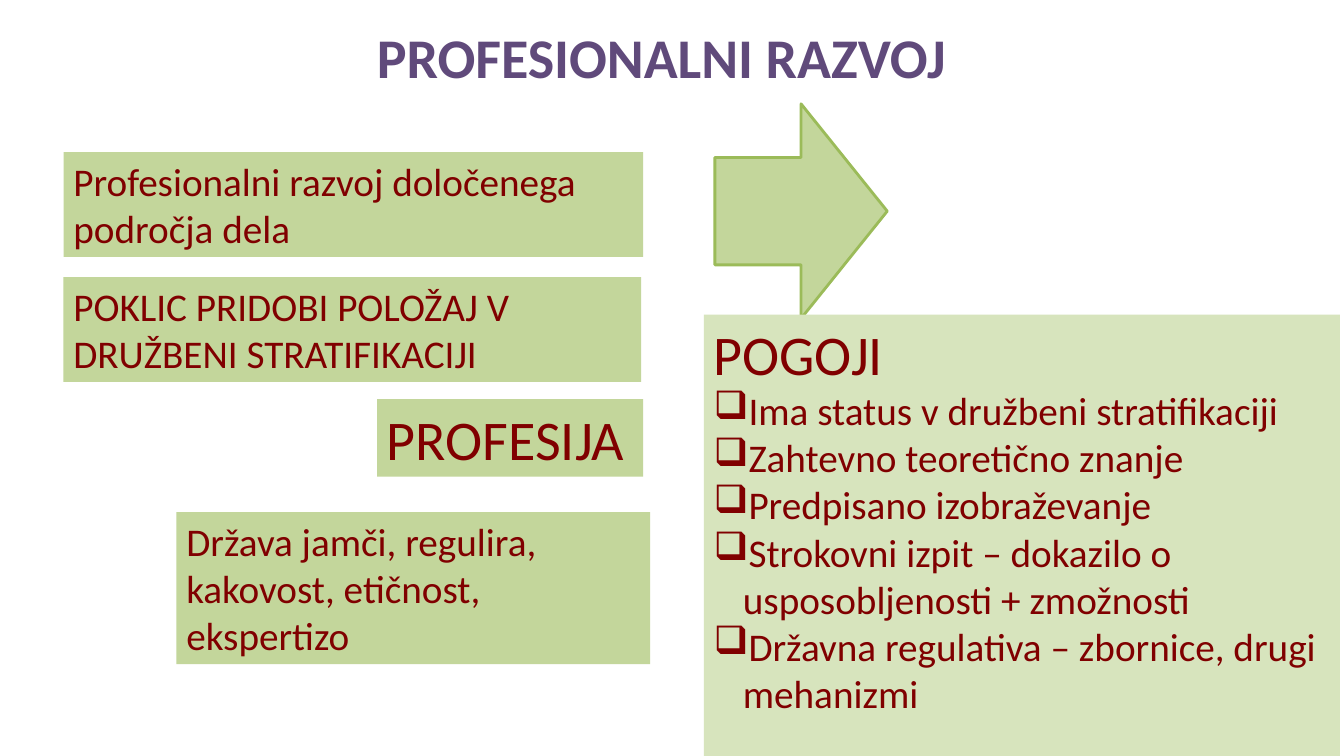
import pptx
import pptx.dml.color
import pptx.enum.shapes
import pptx.enum.text
import pptx.util
from lxml import etree
from pptx.util import Inches

COLORS = {
    "box": "C3D69B",
    "conditions": "D7E4BD",
    "arrow_line": "9BBB59",
    "text": "800000",
    "title": "604A7B",
}
FONT = "Calibri"
BODY_SIZE = 28
HEADING_SIZE = 40
BULLET_INDENT = 0.29

STATEMENTS = [
    ("POKLIC PRIDOBI POLOŽAJ V DRUŽBENI STRATIFIKACIJI", (0.63, 2.75, 5.73, 1.04), BODY_SIZE),
    ("Država jamči, regulira, kakovost, etičnost, ekspertizo", (1.75, 5.08, 4.7, 1.51), BODY_SIZE),
    ("Profesionalni razvoj določenega področja dela", (0.63, 1.51, 5.75, 1.04), BODY_SIZE),
    ("PROFESIJA", (3.74, 3.96, 2.64, 0.77), HEADING_SIZE),
]
CONDITIONS = [
    "Ima status v družbeni stratifikaciji",
    "Zahtevno teoretično znanje",
    "Predpisano izobraževanje",
    "Strokovni izpit – dokazilo o usposobljenosti + zmožnosti",
    "Državna regulativa – zbornice, drugi mehanizmi",
]


def rgb(name):
    return pptx.dml.color.RGBColor.from_string(COLORS[name])


def style_paragraph(para, text, size, color="text", bold=False):
    para.text = text
    para.alignment = pptx.enum.text.PP_ALIGN.LEFT
    para.font.name = FONT
    para.font.size = pptx.util.Pt(size)
    para.font.bold = bold
    para.font.color.rgb = rgb(color)


def add_bullet(para):
    properties = para._p.get_or_add_pPr()
    properties.set("marL", str(Inches(BULLET_INDENT)))
    properties.set("indent", str(-Inches(BULLET_INDENT)))
    bullet = etree.SubElement(properties, pptx.oxml.ns.qn("a:buChar"))
    bullet.set("char", "❑")


def add_filled_shape(page, kind, bounds, fill):
    shape = page.shapes.add_shape(kind, *map(Inches, bounds))
    shape.shadow.inherit = False
    shape.fill.solid()
    shape.fill.fore_color.rgb = rgb(fill)
    shape.line.fill.background()
    return shape


def add_text_panel(page, text, bounds, size, fill="box"):
    panel = add_filled_shape(page, pptx.enum.shapes.MSO_SHAPE.RECTANGLE, bounds, fill)
    frame = panel.text_frame
    frame.word_wrap = True
    frame.vertical_anchor = pptx.enum.text.MSO_ANCHOR.TOP
    style_paragraph(frame.paragraphs[0], text, size)
    return frame


def add_arrow(page):
    arrow = add_filled_shape(
        page, pptx.enum.shapes.MSO_SHAPE.DOWN_ARROW, (6.88, 1.24, 2.13, 1.71), "box"
    )
    arrow.rotation = 270
    arrow.line.color.rgb = rgb("arrow_line")
    arrow.line.width = pptx.util.Pt(2)


def add_title(page):
    box = page.shapes.add_textbox(*map(Inches, (3.61, 0.17, 5.9, 0.77)))
    box.text_frame.word_wrap = False
    para = box.text_frame.paragraphs[0]
    style_paragraph(para, "PROFESIONALNI RAZVOJ", HEADING_SIZE, "title", True)
    para.alignment = pptx.enum.text.PP_ALIGN.CENTER


def add_conditions(page):
    frame = add_text_panel(page, "POGOJI", (6.98, 3.12, 6.31, 4.38), HEADING_SIZE, "conditions")
    for condition in CONDITIONS:
        para = frame.add_paragraph()
        style_paragraph(para, condition, BODY_SIZE)
        add_bullet(para)


def main():
    deck = pptx.Presentation()
    deck.slide_width = Inches(13.33)
    deck.slide_height = Inches(7.5)
    page = deck.slides.add_slide(deck.slide_layouts[6])
    for text, bounds, size in STATEMENTS:
        add_text_panel(page, text, bounds, size)
    add_arrow(page)
    add_title(page)
    add_conditions(page)
    deck.save("out.pptx")


if __name__ == "__main__":
    main()
